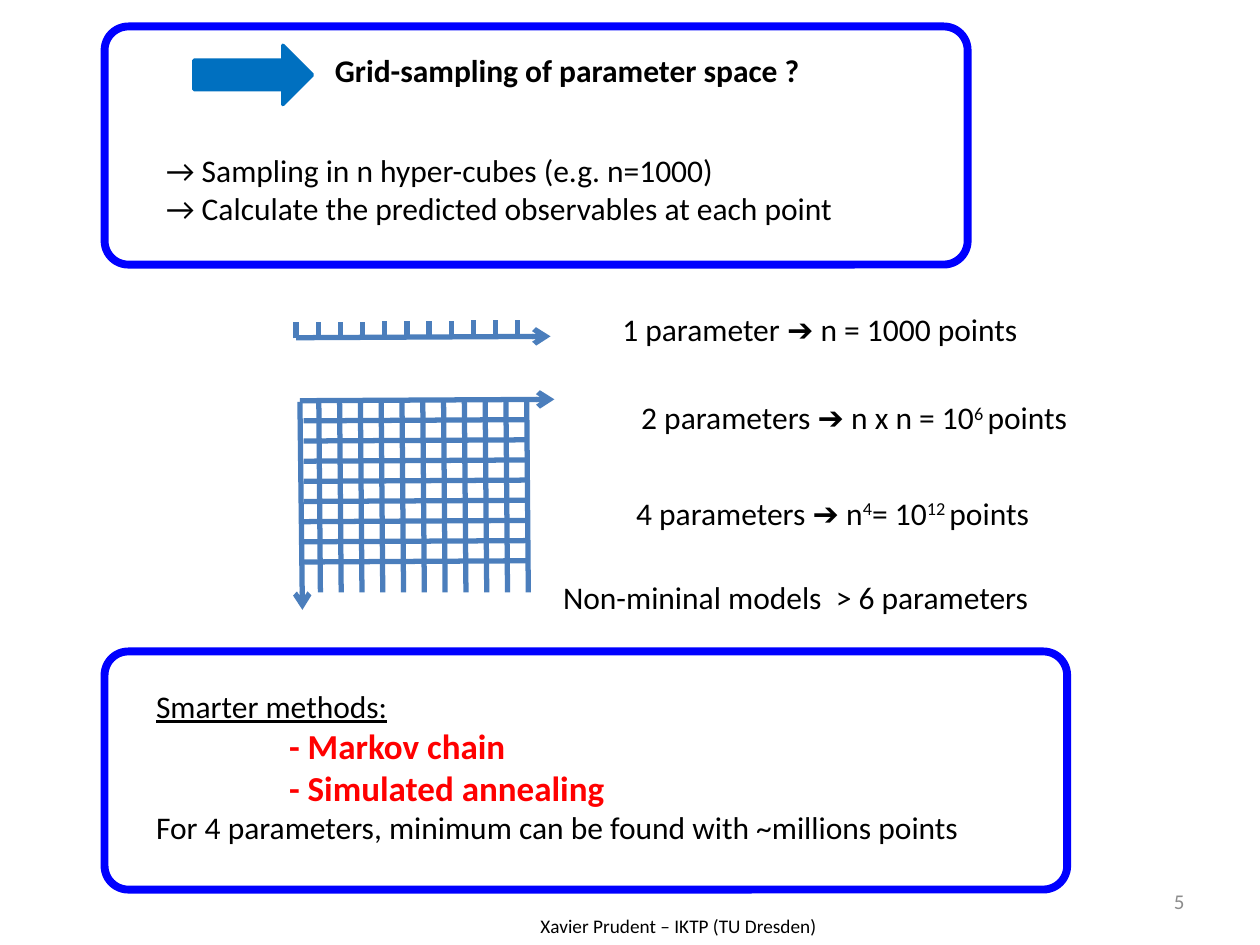
import lxml.etree
import pptx
import pptx.dml.color
import pptx.enum.shapes
import pptx.enum.text
import pptx.oxml.ns
import pptx.util

Pt = pptx.util.Pt
RGBColor = pptx.dml.color.RGBColor
MSO_SHAPE = pptx.enum.shapes.MSO_SHAPE
ALIGN = pptx.enum.text.PP_ALIGN
ANCHOR = pptx.enum.text.MSO_ANCHOR
qn = pptx.oxml.ns.qn

BLACK = RGBColor(0x00, 0x00, 0x00)
GREY = RGBColor(0x8C, 0x8C, 0x8C)
RED = RGBColor(0xFF, 0x00, 0x00)
FRAME_BLUE = RGBColor(0x00, 0x00, 0xFF)
ARROW_BLUE = RGBColor(0x00, 0x70, 0xC0)
GRID_BLUE = RGBColor(0x4B, 0x7E, 0xBC)

deck = pptx.Presentation()
deck.slide_width, deck.slide_height = Pt(720), Pt(540)
slide = deck.slides.add_slide(deck.slide_layouts[6])


def write(text, box=None, frame=None, size=18, color=BLACK, bold=False,
          underline=False, align=ALIGN.LEFT, anchor=ANCHOR.TOP, indent=0):
    if frame is None:
        frame = slide.shapes.add_textbox(*[Pt(v) for v in box]).text_frame
        frame.word_wrap = True
        frame.vertical_anchor = anchor
        paragraph = frame.paragraphs[0]
    else:
        paragraph = frame.add_paragraph()
    paragraph.alignment = align
    if indent:
        paragraph._p.get_or_add_pPr().set("marL", str(Pt(indent)))
    for index, part in enumerate(text.split("^")):
        run = paragraph.add_run()
        run.text = part
        run.font.name = "Calibri"
        run.font.size = Pt(size)
        run.font.bold = bold
        run.font.underline = underline
        run.font.color.rgb = color
        if index % 2:
            run._r.get_or_add_rPr().set("baseline", "30000")
    return frame


def draw_line(x1, y1, x2, y2, arrow=False):
    line = slide.shapes.add_connector(
        pptx.enum.shapes.MSO_CONNECTOR.STRAIGHT, Pt(x1), Pt(y1), Pt(x2), Pt(y2))
    line.line.color.rgb = GRID_BLUE
    line.line.width = Pt(3)
    if arrow:
        lxml.etree.SubElement(line.line._get_or_add_ln(), qn("a:tailEnd"), type="arrow")
    lxml.etree.SubElement(line._element.spPr, qn("a:effectLst"))


write("5", (516.24, 500.4, 167.76, 28.8), size=12, color=GREY,
      align=ALIGN.RIGHT, anchor=ANCHOR.MIDDLE)

sampling = write("→ Sampling in n hyper-cubes (e.g. n=1000)", (87.84, 82.8, 503.28, 51.12))
write("→ Calculate the predicted observables at each point", frame=sampling)

draw_line(169.2, 193, 314.6, 192.2, arrow=True)
for i in range(11):
    x = 169.2 + 12.67 * i
    draw_line(x, 193.3 - 0.15 * i, x, 184.3 - 0.15 * i)

draw_line(171.4, 229, 316.8, 228.2, arrow=True)
draw_line(171.4, 229.7, 172.8, 348.5, arrow=True)
for column in range(11):
    x = 182.2 + 11.88 * column
    draw_line(x, 229.8, x + 0.9, 338.5)
for row in range(8):
    y = 239.8 + 11.52 * row
    draw_line(301, y, 173.5, y + 0.7)

for text, box in [
    ("1 parameter ➔ n = 1000 points", (348.48, 173.52, 293.76, 28.8)),
    ("2 parameters ➔ n x n = 10^6 ^points", (359.28, 223.92, 282.24, 28.8)),
    ("4 parameters ➔ n^4^= 10^12 ^points", (356.4, 278.64, 282.24, 28.8)),
    ("Non-mininal models  > 6 parameters", (314.64, 326.88, 383.04, 28.8)),
]:
    write(text, box)

arrow = slide.shapes.add_shape(MSO_SHAPE.RIGHT_ARROW, Pt(110.88), Pt(25.92), Pt(67.68), Pt(33.84))
arrow.shadow.inherit = False
arrow.fill.solid()
arrow.fill.fore_color.rgb = ARROW_BLUE
arrow.line.color.rgb = ARROW_BLUE
arrow.line.width = Pt(2)

write("Grid-sampling of parameter space ?", (184.32, 25.92, 419.76, 28.8), bold=True)

methods = write("Smarter methods:", (82.08, 388.8, 594.72, 99.36), underline=True)
for method in ("- Markov chain", "- Simulated annealing"):
    write(method, frame=methods, size=20, color=RED, bold=True, indent=76)
write("For 4 parameters, minimum can be found with ~millions points", frame=methods)

for top, width in [(15.12, 493.2), (372.24, 550.08)]:
    border = slide.shapes.add_shape(
        MSO_SHAPE.ROUNDED_RECTANGLE, Pt(59.76), Pt(top), Pt(width), Pt(136.08))
    border.adjustments[0] = 0.1
    border.shadow.inherit = False
    border.fill.background()
    border.line.color.rgb = FRAME_BLUE
    border.line.width = Pt(4.5)

write("Xavier Prudent – IKTP (TU Dresden)", (157.68, 519.12, 460.08, 20.88),
      size=11, align=ALIGN.CENTER)

deck.save("out.pptx")
